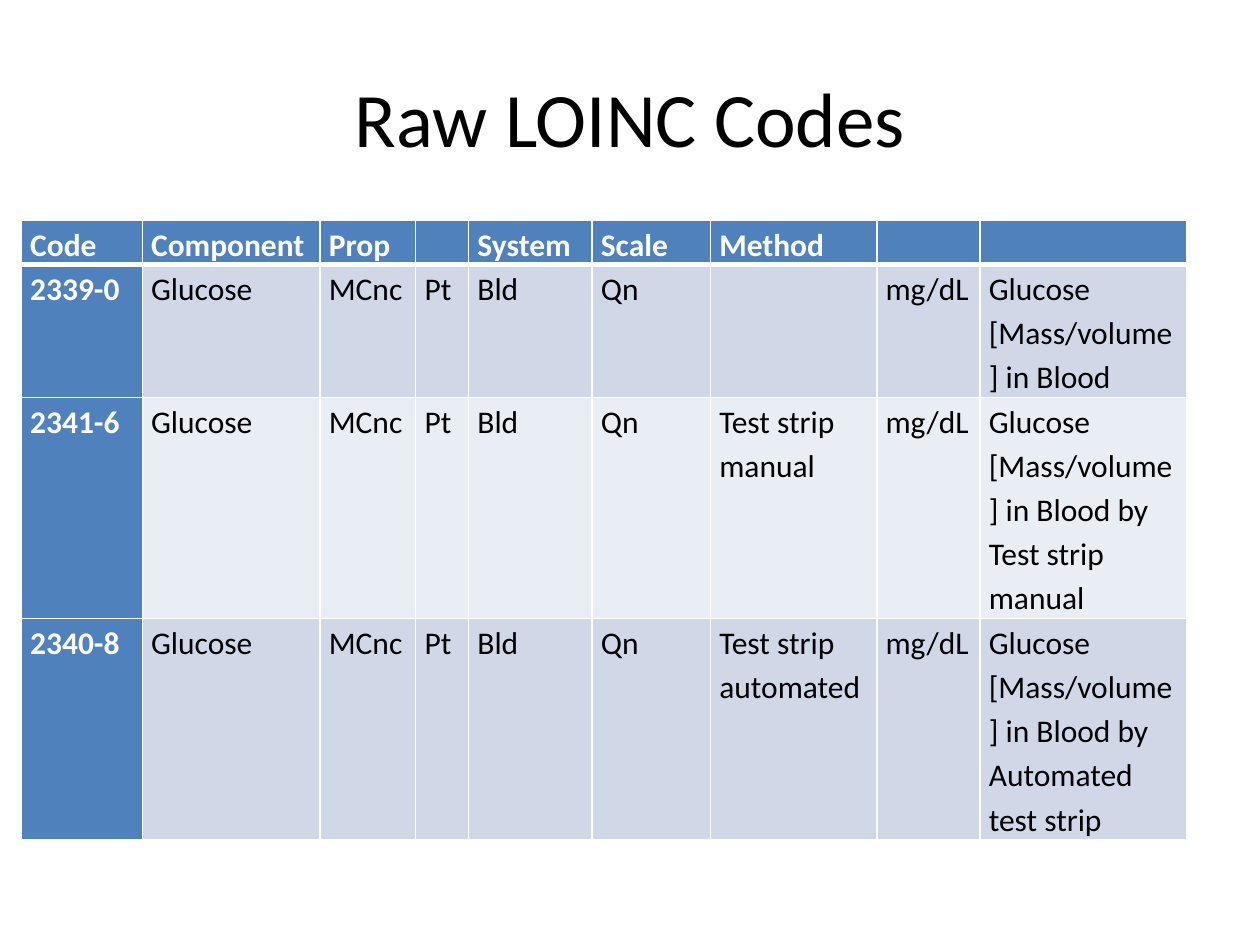
from lxml import etree
from pptx import Presentation
from pptx.dml.color import RGBColor
from pptx.enum import text
from pptx.oxml import ns
from pptx.util import Inches, Pt

BLUE = RGBColor(0x4F, 0x81, 0xBD)
BAND = RGBColor(0xD0, 0xD8, 0xE8)
PALE = RGBColor(0xE9, 0xED, 0xF4)
WHITE = RGBColor(0xFF, 0xFF, 0xFF)
BLACK = RGBColor(0, 0, 0)

WIDTHS = [0.96, 1.41, 0.76, 0.42, 0.98, 0.94, 1.32, 0.82, 1.64]
HEIGHTS = [0.32, 1, 1.68, 1.68]
HEAD = ["Code", "Component", "Prop", "", "System", "Scale", "Method", "", ""]
TESTS = [
    ("2339-0", "", ""),
    ("2341-6", "Test strip manual", " by Test strip manual"),
    ("2340-8", "Test strip automated", " by Automated test strip"),
]
ROWS = [HEAD] + [
    [code, "Glucose", "MCnc", "Pt", "Bld", "Qn", method, "mg/dL",
     "Glucose [Mass/volume] in Blood" + tail]
    for code, method, tail in TESTS
]


def write(frame, words, size=18, color=BLACK, bold=False, align=None, space=None):
    para = frame.paragraphs[0]
    para.alignment = align
    para.line_spacing = space
    para.font.size = Pt(size)
    if words:
        run = para.add_run()
        run.text = words
        font = run.font
        font.name, font.size, font.bold = "Calibri", Pt(size), bold
        font.color.rgb = color


def edge(cell, side, width):
    """Draw a white border on one side (L, R, T or B) of a cell."""
    line = etree.SubElement(cell._tc.get_or_add_tcPr(), ns.qn("a:ln" + side),
                            w=str(Pt(width)))
    fill = etree.SubElement(line, ns.qn("a:solidFill"))
    etree.SubElement(fill, ns.qn("a:srgbClr"), val=str(WHITE))


prs = Presentation()
prs.slide_width, prs.slide_height = Inches(10), Inches(7.5)
slide = prs.slides.add_slide(prs.slide_layouts[5])

title = slide.shapes.title
title.left, title.top = Inches(0.5), Inches(0.3)
title.width, title.height = Inches(9), Inches(1.25)
title.text_frame.vertical_anchor = text.MSO_ANCHOR.MIDDLE
write(title.text_frame, "Raw LOINC Codes", size=44, align=text.PP_ALIGN.CENTER)

table = slide.shapes.add_table(
    len(ROWS), len(WIDTHS), Inches(0.17), Inches(1.75),
    Inches(sum(WIDTHS)), Inches(sum(HEIGHTS))).table
table.first_col = True
for col, width in zip(table.columns, WIDTHS):
    col.width = Inches(width)
for row, height in zip(table.rows, HEIGHTS):
    row.height = Inches(height)

for r, row in enumerate(ROWS):
    for c, words in enumerate(row):
        cell = table.cell(r, c)
        cell.margin_left = cell.margin_right = Inches(0.07)
        cell.margin_top = cell.margin_bottom = 0
        key = r == 0 or c == 0
        write(cell.text_frame, words, color=WHITE if key else BLACK,
              bold=key, space=1.15)
        edge(cell, "L", 1)
        edge(cell, "R", 1)
        edge(cell, "T", 3 if r == 1 else 1)
        edge(cell, "B", 3 if r == 0 else 1)
        cell.fill.solid()
        cell.fill.fore_color.rgb = BLUE if key else BAND if r % 2 else PALE

prs.save("out.pptx")
